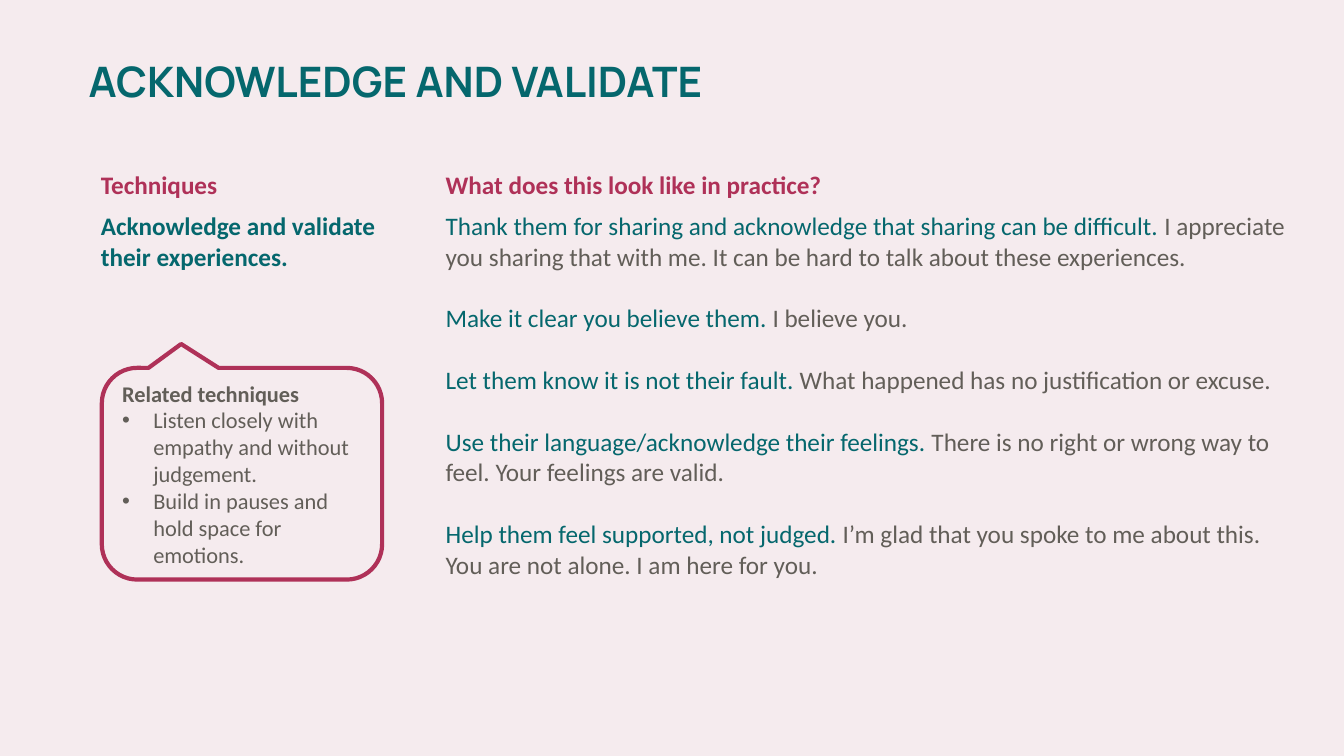
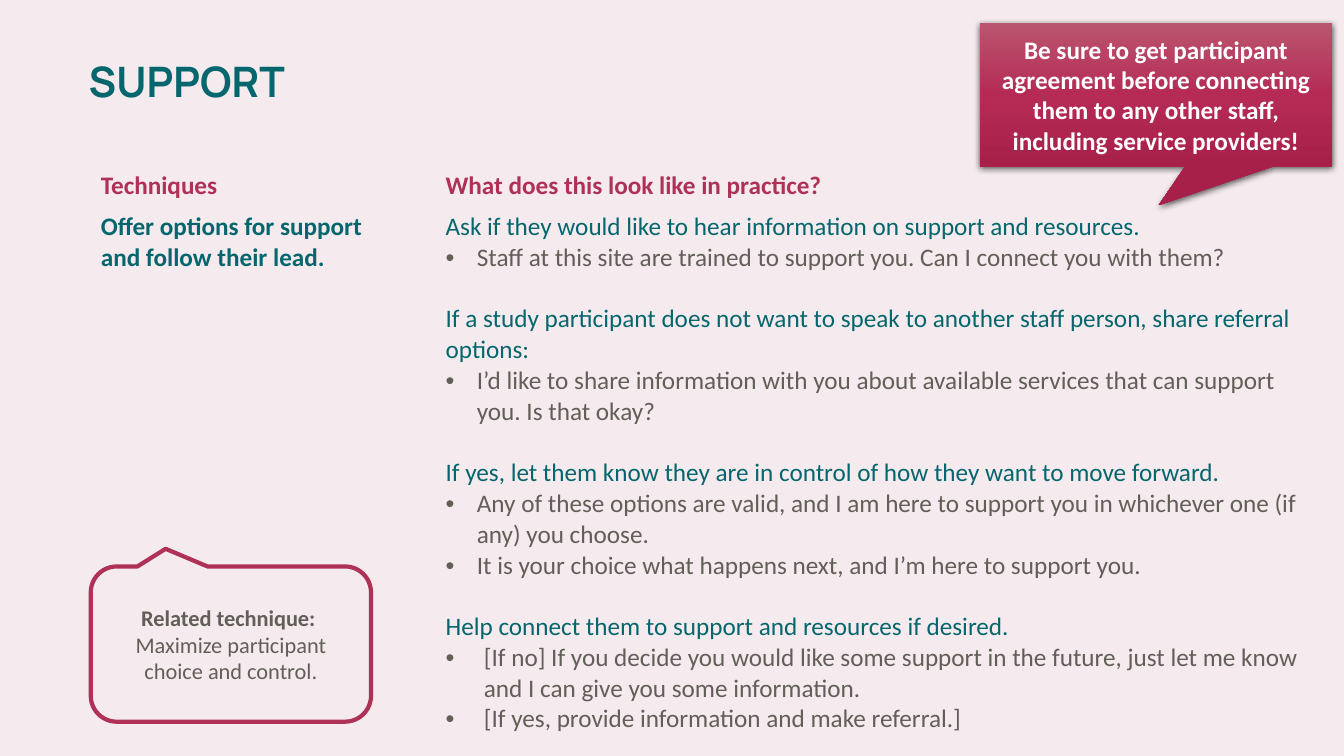
from copy import deepcopy
from dataclasses import dataclass

from pptx import Presentation
from pptx import util as u
from pptx.dml.color import RGBColor
from pptx.enum import shapes, text
from pptx.oxml import parse_xml
from pptx.oxml.ns import nsdecls, qn
from pptx.oxml.xmlchemy import OxmlElement


@dataclass(frozen=True)
class Theme:
    paper: str = "F5EBEE"
    teal: str = "05676D"
    berry: str = "AF3158"
    grey: str = "625E58"
    white: str = "FFFFFF"
    alert: tuple = ((0, "BA556E"), (0.5, "B52B56"), (1, "A7204A"))
    title_font: str = "Manrope"
    body_font: str = "Calibri"
    title_size: int = 30
    body_size: int = 18
    note_size: int = 16
    group_gap: int = 22
    outline: int = 3
    indent: float = 0.31


THEME = Theme()
NO_GRID = "{2D5ABB26-0587-4C30-8999-92F81FD0307C}"
TITLE_BOX = (0, 0.21, 11.5, 1.25)
TABLE_ORIGIN = (0.9, 1.64)
COLUMNS = (3.17, 0.25, 8.68)
HEADER_HEIGHT = 0.41


def inches(box):
    return [u.Inches(length) for length in box]


def add_run(paragraph, wording, color, size=THEME.body_size, bold=False,
            face=THEME.body_font):
    run = paragraph.add_run()
    run.text = wording
    run.font.name = face
    run.font.size = u.Pt(size)
    run.font.bold = bold
    run.font.color.rgb = RGBColor.from_string(color)


def add_bullet(paragraph, indent=THEME.indent):
    properties = paragraph._p.get_or_add_pPr()
    properties.set("marL", str(u.Inches(indent)))
    properties.set("indent", str(-u.Inches(indent)))
    for tag, key, setting in (("a:buFont", "typeface", "Arial"),
                              ("a:buChar", "char", "•")):
        mark = OxmlElement(tag)
        mark.set(key, setting)
        properties.append(mark)


def next_paragraph(frame, first):
    return frame.paragraphs[0] if first else frame.add_paragraph()


def add_titled_slide(deck, wording):
    slide = deck.slides.add_slide(deck.slide_layouts[5])
    title = slide.shapes.title
    title.left, title.top, title.width, title.height = inches(TITLE_BOX)
    frame = title.text_frame
    frame.auto_size = text.MSO_AUTO_SIZE.NONE
    frame.word_wrap = True
    frame.vertical_anchor = text.MSO_ANCHOR.MIDDLE
    frame.margin_left = u.Inches(0.88)
    heading = frame.paragraphs[0]
    heading.alignment = text.PP_ALIGN.LEFT
    heading.line_spacing = 0.9
    add_run(heading, wording, THEME.teal, THEME.title_size, True,
            THEME.title_font)
    return slide


def fill_practice(frame, groups):
    for index, (advice, reply, bullets, indent) in enumerate(groups):
        lead = next_paragraph(frame, index == 0)
        if index:
            lead.space_before = u.Pt(THEME.group_gap)
        add_run(lead, advice, THEME.teal)
        if reply:
            add_run(lead, reply, THEME.grey)
        for wording in bullets:
            example = frame.add_paragraph()
            add_bullet(example, indent)
            add_run(example, wording, THEME.grey)


def add_technique_table(slide, height, technique, groups):
    frame = slide.shapes.add_table(
        2, len(COLUMNS), *inches((*TABLE_ORIGIN, sum(COLUMNS), height)))
    table = frame.table
    table._tbl.tblPr.find(qn("a:tableStyleId")).text = NO_GRID
    table.first_row = table.horz_banding = False
    for column, width in zip(table.columns, COLUMNS):
        column.width = u.Inches(width)
    for row, tall in zip(table.rows, (HEADER_HEIGHT, height - HEADER_HEIGHT)):
        row.height = u.Inches(tall)
    for cell in table.iter_cells():
        cell.fill.background()
    for row, column, wording, color in (
            (0, 0, "Techniques", THEME.berry),
            (0, 2, "What does this look like in practice?", THEME.berry),
            (1, 0, technique, THEME.teal)):
        label = table.cell(row, column).text_frame.paragraphs[0]
        add_run(label, wording, color, bold=True)
    fill_practice(table.cell(1, 2).text_frame, groups)


def add_callout(slide, preset, box, adjustments):
    callout = slide.shapes.add_shape(preset, *inches(box))
    callout.shadow.inherit = False
    for index, amount in enumerate(adjustments):
        callout.adjustments[index] = amount
    callout.text_frame.word_wrap = True
    callout.text_frame.vertical_anchor = text.MSO_ANCHOR.MIDDLE
    return callout


def add_related(slide, box, tip, heading, techniques, bulleted):
    callout = add_callout(
        slide, shapes.MSO_SHAPE.ROUNDED_RECTANGULAR_CALLOUT, box,
        (*tip, 0.167))
    callout.fill.background()
    callout.line.color.rgb = RGBColor.from_string(THEME.berry)
    callout.line.width = u.Pt(THEME.outline)
    align = text.PP_ALIGN.LEFT if bulleted else text.PP_ALIGN.CENTER
    for index, wording in enumerate((heading, *techniques)):
        paragraph = next_paragraph(callout.text_frame, index == 0)
        paragraph.alignment = align
        if bulleted and index:
            add_bullet(paragraph)
        add_run(paragraph, wording, THEME.grey, THEME.note_size, index == 0)


def add_alert(slide, box, tip, wording):
    callout = add_callout(
        slide, shapes.MSO_SHAPE.RECTANGULAR_CALLOUT, box, tip)
    callout.line.fill.background()
    callout.fill.gradient()
    callout.fill.gradient_angle = 270
    properties = callout._element.spPr
    stops = properties.find(qn("a:gradFill")).find(qn("a:gsLst"))
    stops.append(deepcopy(stops[-1]))
    for stop, (position, color) in zip(callout.fill.gradient_stops,
                                       THEME.alert):
        stop.position = position
        stop.color.rgb = RGBColor.from_string(color)
    properties.find(qn("a:effectLst")).append(parse_xml(
        f'<a:outerShdw {nsdecls("a")} blurRad="{u.Pt(4.5)}" '
        f'dist="{u.Pt(1.5)}" dir="5400000" rotWithShape="0">'
        '<a:srgbClr val="000000"><a:alpha val="63000"/></a:srgbClr>'
        '</a:outerShdw>'))
    message = callout.text_frame.paragraphs[0]
    message.alignment = text.PP_ALIGN.CENTER
    add_run(message, wording, THEME.white, bold=True)


def build_acknowledge(deck):
    slide = add_titled_slide(deck, "ACKNOWLEDGE AND VALIDATE")
    replies = (
        ("Thank them for sharing and acknowledge that sharing can be "
         "difficult. ",
         "I appreciate you sharing that with me. It can be hard to talk "
         "about these experiences."),
        ("Make it clear you believe them. ", "I believe you."),
        ("Let them know it is not their fault. ",
         "What happened has no justification or excuse."),
        ("Use their language/acknowledge their feelings. ",
         "There is no right or wrong way to feel. Your feelings are valid."),
        ("Help them feel supported, not judged. ",
         "I’m glad that you spoke to me about this. You are not alone. "
         "I am here for you."),
    )
    add_technique_table(
        slide, 4.11, "Acknowledge and validate their experiences.",
        [(advice, reply, (), THEME.indent) for advice, reply in replies])
    add_related(
        slide, (1.01, 3.65, 2.78, 2.1), (-0.217, -0.613),
        "Related techniques",
        ("Listen closely with empathy and without judgement.",
         "Build in pauses and hold space for emotions."), True)


def build_support(deck):
    slide = add_titled_slide(deck, "SUPPORT")
    examples = (
        ("Ask if they would like to hear information on support and "
         "resources.",
         ("Staff at this site are trained to support you. Can I connect "
          "you with them?",), THEME.indent),
        ("If a study participant does not want to speak to another staff "
         "person, share referral options:",
         ("I’d like to share information with you about available services "
          "that can support you. Is that okay?",), THEME.indent),
        ("If yes, let them know they are in control of how they want to "
         "move forward.",
         ("Any of these options are valid, and I am here to support you in "
          "whichever one (if any) you choose.",
          "It is your choice what happens next, and I’m here to support "
          "you."), THEME.indent),
        ("Help connect them to support and resources if desired.",
         ("[If no] If you decide you would like some support in the future, "
          "just let me know and I can give you some information.",
          "[If yes, provide information and make referral.]"), 0.38),
    )
    add_technique_table(
        slide, 5.61, "Offer options for support and follow their lead.",
        [(advice, "", bullets, indent)
         for advice, bullets, indent in examples])
    add_related(
        slide, (0.9, 5.62, 2.78, 1.54), (-0.233, -0.614),
        "Related technique: ",
        ("Maximize participant choice and control.",), False)
    add_alert(
        slide, (9.72, 0.23, 3.49, 1.42), (0.008, 0.771),
        "Be sure to get participant agreement before connecting them to any "
        "other staff, including service providers!")


def main():
    deck = Presentation()
    deck.slide_width, deck.slide_height = inches((13.33, 7.5))
    paper = deck.slide_master.background.fill
    paper.solid()
    paper.fore_color.rgb = RGBColor.from_string(THEME.paper)
    build_acknowledge(deck)
    build_support(deck)
    deck.save("out.pptx")


if __name__ == "__main__":
    main()
